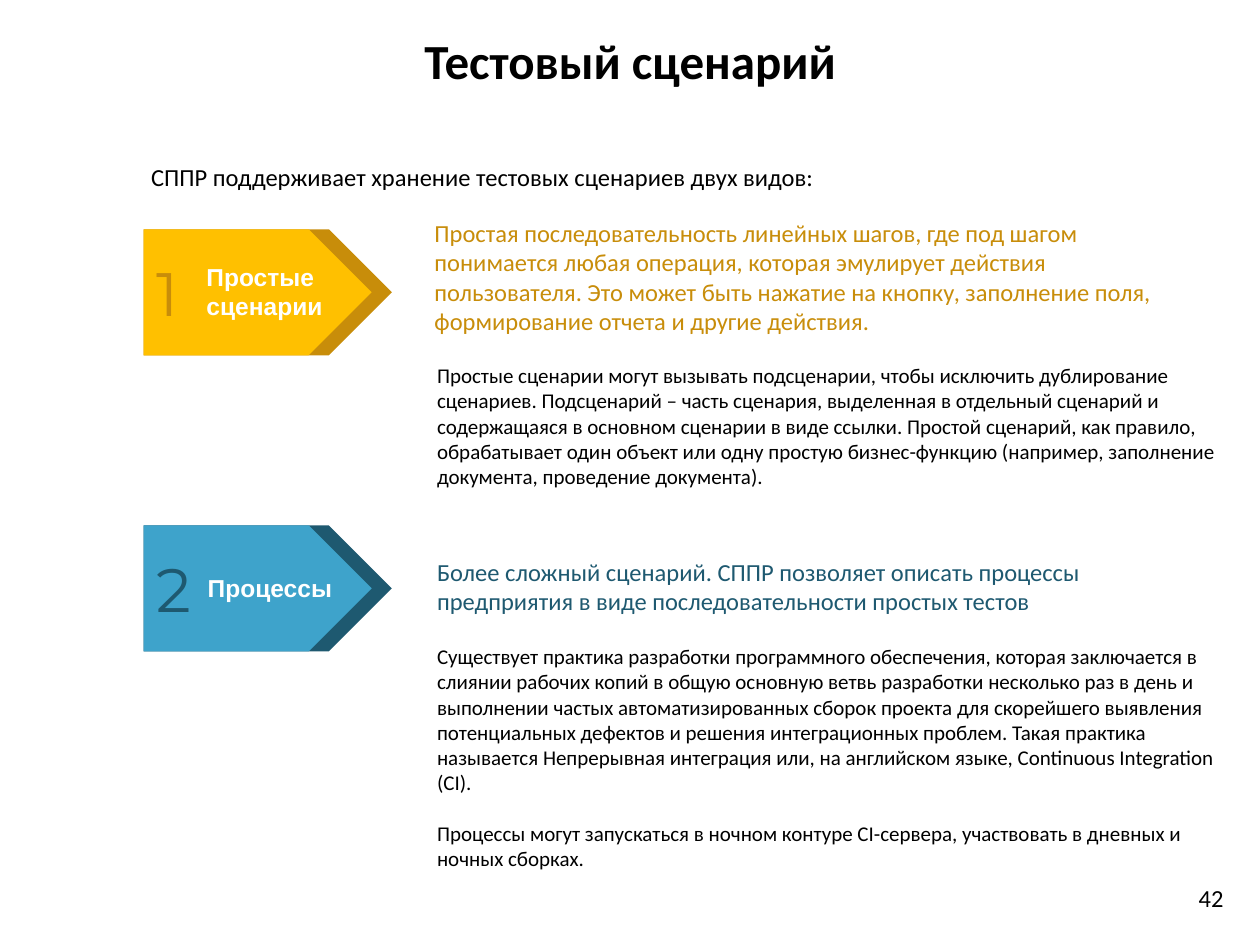
from dataclasses import dataclass
from typing import Optional

from pptx import Presentation
from pptx.dml.color import RGBColor
from pptx.enum.shapes import MSO_SHAPE
from pptx.enum.text import MSO_ANCHOR, PP_ALIGN
from pptx.util import Inches, Pt


@dataclass(frozen=True)
class Theme:
    font: str = "Calibri"
    label_font: str = "Arial"
    number_font: str = "Montserrat"
    black: str = "000000"
    white: str = "FFFFFF"
    title_size: int = 28
    number_size: int = 35
    lead_size: int = 14
    body_size: int = 12
    body_gap: float = 14.6


@dataclass(frozen=True)
class Box:
    left: float
    top: float
    width: float
    height: float

    def emu(self) -> tuple:
        return tuple(Inches(v) for v in (self.left, self.top, self.width, self.height))


@dataclass(frozen=True)
class Style:
    size: int
    color: str
    font: str = "Calibri"
    bold: bool = False


@dataclass(frozen=True)
class Scenario:
    number: str
    label: str
    light: str
    dark: str
    arrow_top: float
    label_box: Box
    lead: str
    lead_box: Box
    body: tuple
    body_box: Box


THEME = Theme()
LEAD = Style(THEME.lead_size, THEME.black)
BODY = Style(THEME.body_size, THEME.black)
LABEL = Style(THEME.lead_size, THEME.white, THEME.label_font, True)

ARROW_LEFT, ARROW_HEIGHT = 1.14, 1.0
BACK_WIDTH, FRONT_WIDTH = 1.97, 1.81

SCENARIOS = (
    Scenario(
        "1", "Простые сценарии", "FFC000", "C88D0A", 1.82,
        Box(1.54, 2.03, 1.25, 0.57),
        "Простая последовательность линейных шагов, где под шагом понимается любая "
        "операция, которая эмулирует действия пользователя. Это может быть нажатие на "
        "кнопку, заполнение поля, формирование отчета и другие действия.",
        Box(3.35, 1.68, 6.14, 1.04),
        ("Простые сценарии могут вызывать подсценарии, чтобы исключить дублирование "
         "сценариев. Подсценарий – часть сценария, выделенная в отдельный сценарий и "
         "содержащаяся в основном сценарии в виде ссылки. Простой сценарий, как правило, "
         "обрабатывает один объект или одну простую бизнес-функцию (например, заполнение "
         "документа, проведение документа).",),
        Box(3.37, 2.83, 6.38, 1.11),
    ),
    Scenario(
        "2", "Процессы", "3EA3CB", "1E5970", 4.17,
        Box(1.55, 4.5, 1.25, 0.34),
        "Более сложный сценарий. СППР позволяет описать процессы предприятия в виде "
        "последовательности простых тестов",
        Box(3.37, 4.37, 5.75, 0.57),
        ("Существует практика разработки программного обеспечения, которая заключается в "
         "слиянии рабочих копий в общую основную ветвь разработки несколько раз в день и "
         "выполнении частых автоматизированных сборок проекта для скорейшего выявления "
         "потенциальных дефектов и решения интеграционных проблем. Такая практика "
         "называется Непрерывная интеграция или, на английском языке, Continuous "
         "Integration (CI).",
         "Процессы могут запускаться в ночном контуре CI-сервера, участвовать в дневных и "
         "ночных сборках."),
        Box(3.37, 5.06, 6.38, 1.92),
    ),
)


def write(tf, paragraphs: tuple, style: Style, align=PP_ALIGN.LEFT,
          gap: float = 0, spacing: Optional[float] = None) -> None:
    tf.word_wrap = True
    for i, text in enumerate(paragraphs):
        p = tf.add_paragraph() if i else tf.paragraphs[0]
        p.alignment = align
        p.space_before = Pt(gap if i else 0)
        if spacing:
            p.line_spacing = spacing
        r = p.add_run()
        r.text = text
        r.font.name = style.font
        r.font.size = Pt(style.size)
        r.font.bold = style.bold
        r.font.color.rgb = RGBColor.from_string(style.color)


def add_text(s, box: Box, paragraphs: tuple, style: Style, **layout) -> None:
    write(s.shapes.add_textbox(*box.emu()).text_frame, paragraphs, style, **layout)


def add_arrow(s, top: float, width: float, color: str):
    box = Box(ARROW_LEFT, top, width, ARROW_HEIGHT)
    sp = s.shapes.add_shape(MSO_SHAPE.PENTAGON, *box.emu())
    sp.shadow.inherit = False
    sp.fill.solid()
    sp.fill.fore_color.rgb = RGBColor.from_string(color)
    sp.line.fill.background()
    return sp


def add_scenario(s, item: Scenario) -> None:
    # Two-tone arrow with number and label
    add_arrow(s, item.arrow_top, BACK_WIDTH, item.dark)
    front = add_arrow(s, item.arrow_top, FRONT_WIDTH, item.light)
    front.text_frame.vertical_anchor = MSO_ANCHOR.MIDDLE
    write(front.text_frame, (item.number,),
          Style(THEME.number_size, item.dark, THEME.number_font))
    add_text(s, item.label_box, (item.label,), LABEL)
    # Coloured definition and explanation
    add_text(s, item.lead_box, (item.lead,), Style(THEME.lead_size, item.dark))
    add_text(s, item.body_box, item.body, BODY, gap=THEME.body_gap)


def main() -> None:
    prs = Presentation()
    prs.slide_width, prs.slide_height = Inches(10), Inches(7.5)
    s = prs.slides.add_slide(prs.slide_layouts[5])

    # Title
    title = s.shapes.title
    title.left, title.top, title.width, title.height = Box(0, 0.02, 10, 1).emu()
    title.text_frame.vertical_anchor = MSO_ANCHOR.MIDDLE
    write(title.text_frame, ("Тестовый сценарий",),
          Style(THEME.title_size, THEME.black, bold=True),
          align=PP_ALIGN.CENTER, spacing=0.8)

    # Introduction and the two kinds of scenario
    add_text(s, Box(1.1, 1.24, 6.61, 0.34),
             ("СППР поддерживает хранение тестовых сценариев двух видов:",), LEAD)
    for item in SCENARIOS:
        add_scenario(s, item)

    # Page number
    add_text(s, Box(7.48, 6.96, 2.33, 0.52), ("42",), LEAD, align=PP_ALIGN.RIGHT)

    prs.save("out.pptx")


if __name__ == "__main__":
    main()
